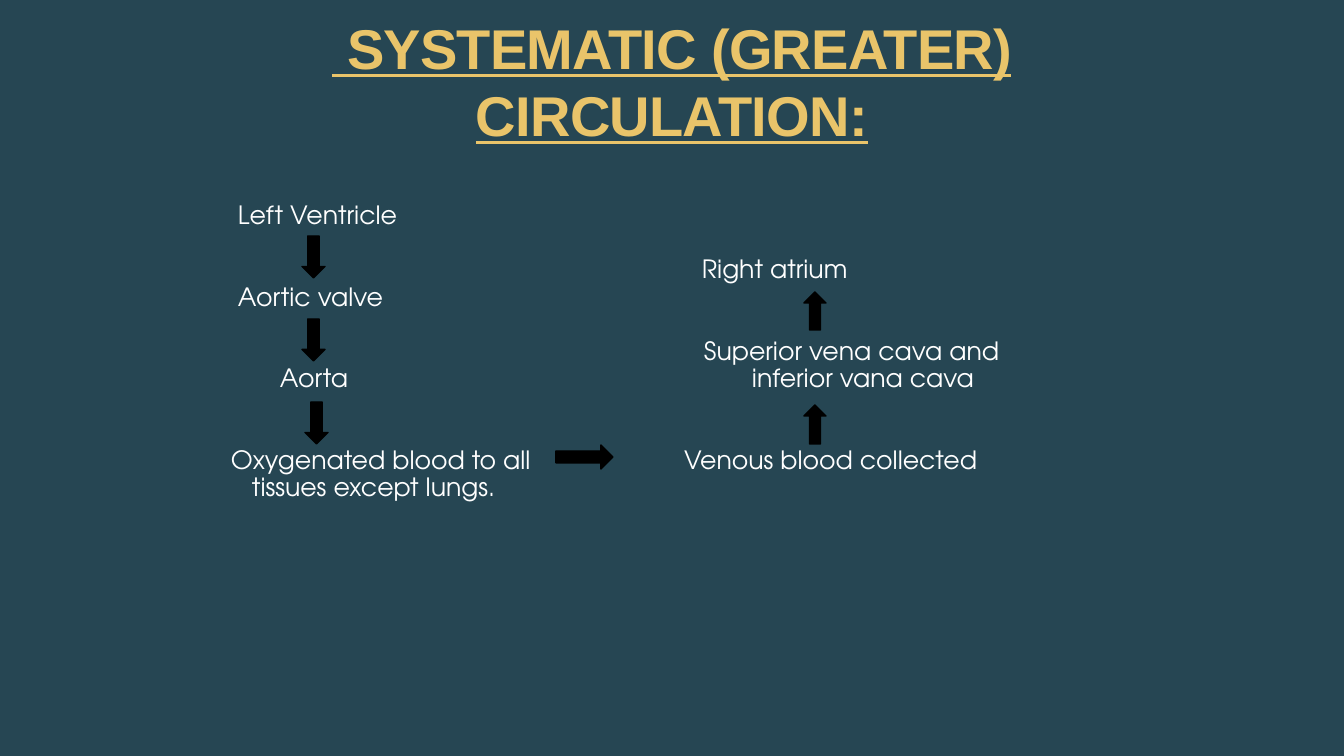
from dataclasses import dataclass

import pptx
import pptx.dml.color
import pptx.enum.shapes
import pptx.enum.text
import pptx.util

BACKGROUND = pptx.dml.color.RGBColor(0x26, 0x46, 0x53)
GOLD = pptx.dml.color.RGBColor(0xE9, 0xC4, 0x6A)
WHITE = pptx.dml.color.RGBColor(0xFF, 0xFF, 0xFF)
BLACK = pptx.dml.color.RGBColor(0x00, 0x00, 0x00)

TITLE_FONT = "Arial"
BODY_FONT = "TeX Gyre Adventor"
EMU_PER_PX = 914400 / 100.8

SHAPE = pptx.enum.shapes.MSO_SHAPE
ANCHOR = pptx.enum.text.MSO_ANCHOR


def px(length: int) -> pptx.util.Emu:
    return pptx.util.Emu(round(length * EMU_PER_PX))


@dataclass(frozen=True)
class Step:
    text: str
    left: int
    top: int
    width: int
    height: int = 28
    hanging: int = 0


@dataclass(frozen=True)
class Arrow:
    kind: pptx.enum.shapes.MSO_SHAPE
    left: int
    top: int
    width: int
    height: int


STEPS = [
    # Arterial side, downwards
    Step("Left Ventricle", 238, 203, 200),
    Step("Aortic valve", 238, 285, 200),
    Step("Aorta", 280, 366, 120),
    Step("Oxygenated blood to all tissues except lungs.", 231, 448, 312, 55, 21),
    # Venous side, upwards
    Step("Venous blood collected", 684, 448, 330),
    Step("Superior vena cava and inferior vana cava", 704, 339, 312, 55, 48),
    Step("Right atrium", 702, 257, 200),
]

ARROWS = [
    Arrow(SHAPE.DOWN_ARROW, 302, 236, 23, 42),
    Arrow(SHAPE.DOWN_ARROW, 302, 319, 23, 42),
    Arrow(SHAPE.DOWN_ARROW, 305, 402, 23, 42),
    Arrow(SHAPE.RIGHT_ARROW, 556, 445, 57, 24),
    Arrow(SHAPE.UP_ARROW, 804, 405, 22, 39),
    Arrow(SHAPE.UP_ARROW, 804, 292, 22, 38),
]


def add_text(page: pptx.slide.Slide, text: str, left: int, top: int, width: int, height: int,
             anchor: pptx.enum.text.MSO_ANCHOR = ANCHOR.TOP) -> pptx.text.text._Paragraph:
    box = page.shapes.add_textbox(px(left), px(top), px(width), px(height))
    frame = box.text_frame
    frame.word_wrap = True
    frame.vertical_anchor = anchor
    frame.margin_left = frame.margin_right = frame.margin_top = frame.margin_bottom = 0
    para = frame.paragraphs[0]
    para.add_run().text = text
    return para


def add_title(page: pptx.slide.Slide) -> None:
    para = add_text(page, " SYSTEMATIC (GREATER) CIRCULATION:", 168, 14, 1008, 134, ANCHOR.BOTTOM)
    para.alignment = pptx.enum.text.PP_ALIGN.CENTER
    para.font.name = TITLE_FONT
    para.font.size = pptx.util.Pt(40)
    para.font.bold = True
    para.font.underline = True
    para.font.color.rgb = GOLD
    # Slightly tightened letter spacing, in hundredths of a point
    para.runs[0].font._element.set("spc", "-50")


def add_step(page: pptx.slide.Slide, step: Step) -> None:
    para = add_text(page, step.text, step.left, step.top, step.width, step.height)
    para.line_spacing = 0.9
    if step.hanging:
        properties = para._p.get_or_add_pPr()
        properties.set("marL", str(px(step.hanging)))
        properties.set("indent", str(-px(step.hanging)))
    para.font.name = BODY_FONT
    para.font.size = pptx.util.Pt(18)
    para.font.color.rgb = WHITE


def add_arrow(page: pptx.slide.Slide, arrow: Arrow) -> None:
    shape = page.shapes.add_shape(
        arrow.kind, px(arrow.left), px(arrow.top), px(arrow.width), px(arrow.height))
    shape.shadow.inherit = False
    shape.fill.solid()
    shape.fill.fore_color.rgb = BLACK
    shape.line.color.rgb = BLACK
    shape.line.width = pptx.util.Pt(1)


def main() -> None:
    deck = pptx.Presentation()
    deck.slide_width = px(1344)
    deck.slide_height = px(756)
    page = deck.slides.add_slide(deck.slide_layouts[6])
    page.background.fill.solid()
    page.background.fill.fore_color.rgb = BACKGROUND

    add_title(page)
    for step in STEPS:
        add_step(page, step)
    for arrow in ARROWS:
        add_arrow(page, arrow)

    deck.save("out.pptx")


if __name__ == "__main__":
    main()
